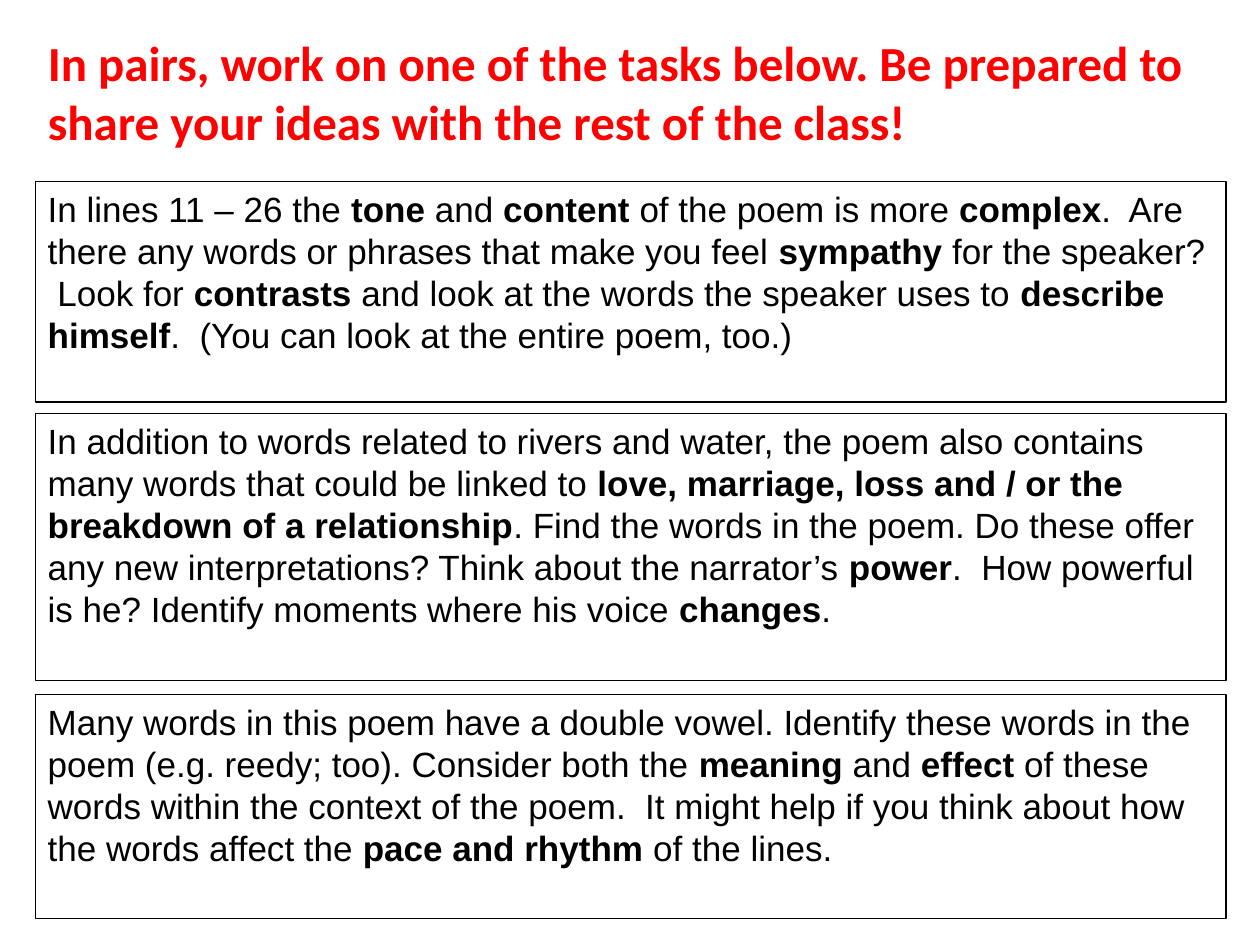
from dataclasses import dataclass

from pptx import Presentation
from pptx.dml.color import RGBColor
from pptx.enum import text
from pptx.util import Inches, Pt


@dataclass(frozen=True)
class Theme:
    ink: RGBColor = RGBColor(0, 0, 0)
    red: RGBColor = RGBColor(255, 0, 0)
    head: str = "Calibri"
    body: str = "Arial"
    big: int = 28
    small: int = 20
    rule: float = 0.75


@dataclass(frozen=True)
class Task:
    top: float
    height: float
    words: str  # bold parts stand between asterisks


THEME = Theme()
LEFT, WIDTH = 0.28, 9.45
TITLE = ("In pairs, work on one of the tasks below. Be prepared to share "
         "your ideas with the rest of the class!")
TASKS = [
    Task(1.44, 1.75,
         "In lines 11 – 26 the *tone* and *content *of the poem is more "
         "*complex*.  Are there any words or phrases that make you feel "
         "*sympathy* for the speaker?  Look for *contrasts* and look at the "
         "words the speaker uses to *describe himself*.  (You can look at "
         "the entire poem, too.)"),
    Task(3.28, 2.12,
         "In addition to words related to rivers and water, the poem also "
         "contains many words that could be linked to *love, marriage, loss "
         "and / or the breakdown of a relationship*. Find the words in the "
         "poem. Do these offer any new interpretations? Think about the "
         "narrator’s *power*.  How powerful is he? Identify moments where "
         "his voice *changes*."),
    Task(5.51, 1.78,
         "Many words in this poem have a double vowel. Identify these words "
         "in the poem (e.g. reedy; too). Consider both the *meaning* and "
         "*effect *of these words within the context of the poem.  It might "
         "help if you think about how the words affect the *pace and rhythm "
         "*of the lines."),
]


def set_frame(frame) -> None:
    frame.word_wrap = True
    frame.auto_size = text.MSO_AUTO_SIZE.NONE
    frame.vertical_anchor = text.MSO_ANCHOR.TOP


def set_font(para, name: str, size: int, color: RGBColor) -> None:
    para.alignment = text.PP_ALIGN.LEFT
    para.font.name = name
    para.font.size = Pt(size)
    para.font.color.rgb = color


def draw_title(slide) -> None:
    title = slide.shapes.title
    title.left, title.top = Inches(LEFT), Inches(0.21)
    title.width, title.height = Inches(WIDTH), Inches(1.04)
    set_frame(title.text_frame)
    para = title.text_frame.paragraphs[0]
    para.text = TITLE
    set_font(para, THEME.head, THEME.big, THEME.red)
    para.font.bold = True


def draw_task(slide, task: Task) -> None:
    box = slide.shapes.add_textbox(Inches(LEFT), Inches(task.top),
                                   Inches(WIDTH), Inches(task.height))
    box.line.color.rgb = THEME.ink
    box.line.width = Pt(THEME.rule)
    set_frame(box.text_frame)
    para = box.text_frame.paragraphs[0]
    set_font(para, THEME.body, THEME.small, THEME.ink)
    for i, part in enumerate(task.words.split("*")):
        run = para.add_run()
        run.text = part
        if i % 2:
            run.font.bold = True


def main() -> None:
    deck = Presentation()
    deck.slide_width, deck.slide_height = Inches(10), Inches(7.5)
    slide = deck.slides.add_slide(deck.slide_layouts.get_by_name("Title Only"))
    draw_title(slide)
    for task in TASKS:
        draw_task(slide, task)
    deck.save("out.pptx")


if __name__ == "__main__":
    main()
